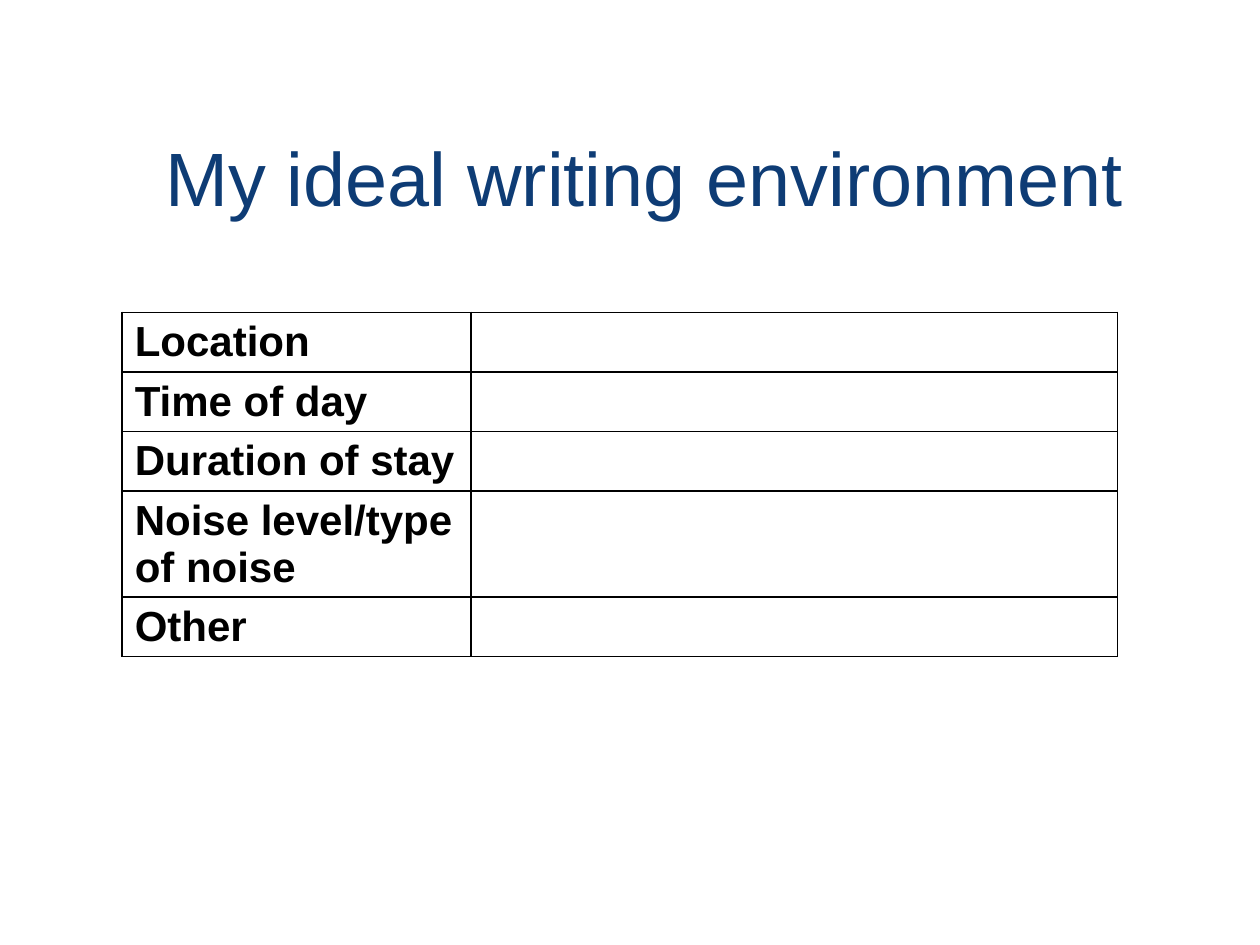
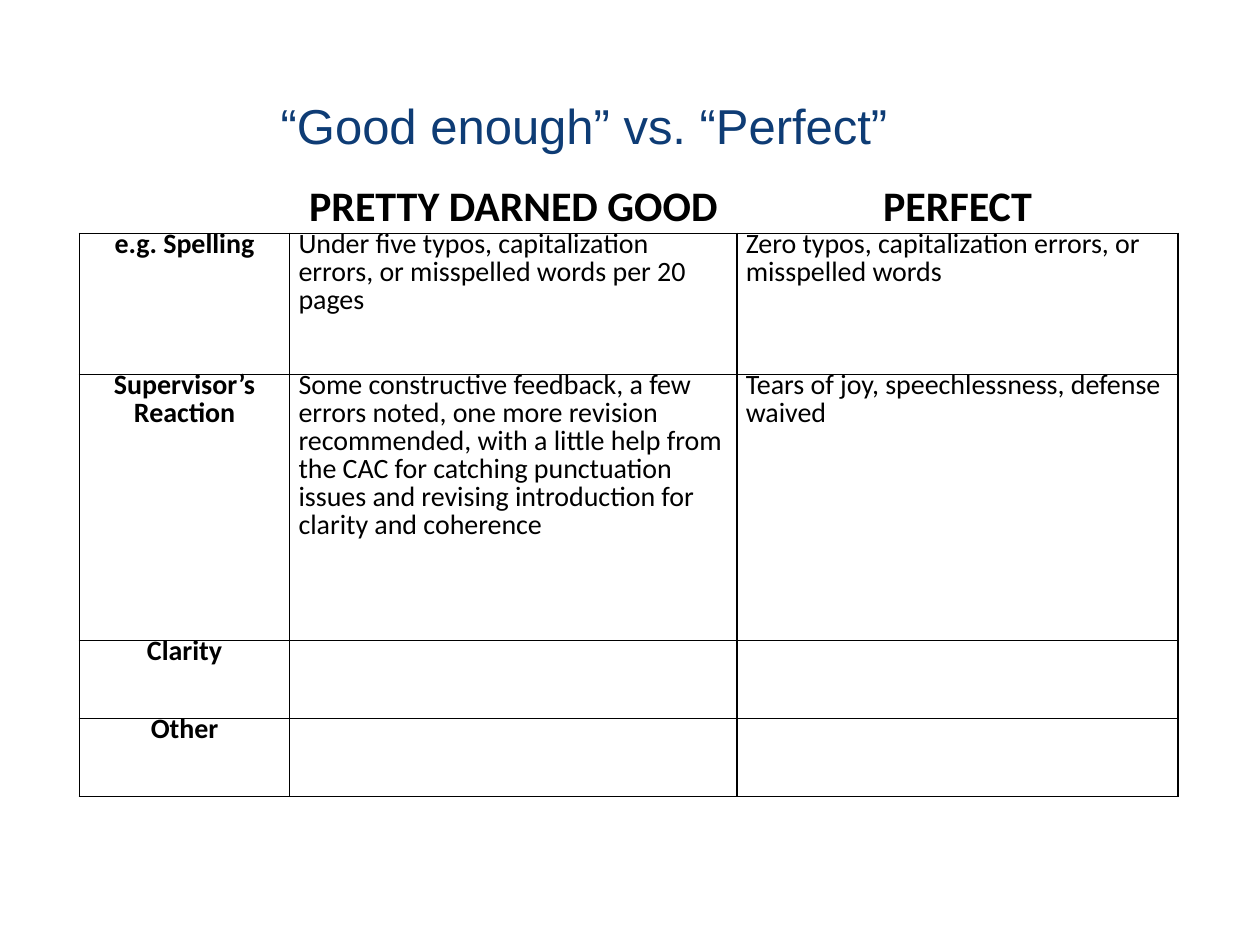
import pptx
import pptx.dml.color
import pptx.enum.text
import pptx.oxml
import pptx.oxml.ns
import pptx.util

Inches = pptx.util.Inches
Pt = pptx.util.Pt
RGBColor = pptx.dml.color.RGBColor
PP_ALIGN = pptx.enum.text.PP_ALIGN
MSO_ANCHOR = pptx.enum.text.MSO_ANCHOR
MSO_AUTO_SIZE = pptx.enum.text.MSO_AUTO_SIZE

TITLE_BLUE = RGBColor(0x0E, 0x3C, 0x75)
BLACK = RGBColor(0, 0, 0)
WHITE = RGBColor(0xFF, 0xFF, 0xFF)
TITLE_FONT = "Arial"
ALL_SIDES = "LRTB"

ENVIRONMENT_LABELS = ["Location", "Time of day", "Duration of stay", "Noise level/type of noise", "Other"]
COMPARISON_ROWS = [
    ["", "PRETTY DARNED GOOD", "PERFECT"],
    ["e.g. Spelling",
     "Under five typos, capitalization errors, or misspelled words per 20 pages",
     "Zero typos, capitalization errors, or misspelled words"],
    ["Supervisor’s Reaction",
     "Some constructive feedback, a few errors noted, one more revision recommended, "
     "with a little help from the CAC for catching punctuation issues and revising "
     "introduction for clarity and coherence",
     "Tears of joy, speechlessness, defense waived"],
    ["Clarity", "", ""],
    ["Other", "", ""],
]


def write_text(text_frame, text, font=TITLE_FONT, size=24, color=BLACK, bold=False,
               align=PP_ALIGN.LEFT, line_spacing=None):
    text_frame.word_wrap = True
    paragraph = text_frame.paragraphs[0]
    paragraph.alignment = align
    if line_spacing:
        paragraph.line_spacing = Pt(line_spacing)
    run = paragraph.add_run()
    run.text = text
    run.font.name = font
    run.font.size = Pt(size)
    run.font.bold = bold
    run.font.color.rgb = color


def add_titled_slide(presentation, title, box, size, align):
    slide = presentation.slides.add_slide(presentation.slide_layouts[5])
    slide.background.fill.solid()
    slide.background.fill.fore_color.rgb = WHITE
    shape = slide.shapes.title
    shape.left, shape.top, shape.width, shape.height = map(Inches, box)
    shape.text_frame.auto_size = MSO_AUTO_SIZE.NONE
    shape.text_frame.vertical_anchor = MSO_ANCHOR.MIDDLE
    write_text(shape.text_frame, title, size=size, color=TITLE_BLUE, align=align)
    return slide


def set_borders(cell, sides):
    properties = cell._tc.get_or_add_tcPr()
    for side in ALL_SIDES:
        paint = f'<a:solidFill><a:srgbClr val="{BLACK}"/></a:solidFill>' if side in sides else "<a:noFill/>"
        properties.append(pptx.oxml.parse_xml(
            f'<a:ln{side} {pptx.oxml.ns.nsdecls("a")} w="{Pt(1)}">{paint}</a:ln{side}>'))
    cell.fill.background()


def add_plain_table(slide, left, top, widths, heights):
    frame = slide.shapes.add_table(
        len(heights), len(widths), Inches(left), Inches(top), Inches(sum(widths)), Inches(sum(heights)))
    table = frame.table
    table.first_row = False
    table.horz_banding = False
    for column, width in zip(table.columns, widths):
        column.width = Inches(width)
    for row, height in zip(table.rows, heights):
        row.height = Inches(height)
    return table


def add_environment_table(slide, left, top):
    table = add_plain_table(slide, left, top, [2.77, 5.13], [0.47, 0.47, 0.47, 0.84, 0.47])
    for row, label in zip(table.rows, ENVIRONMENT_LABELS):
        for cell in row.cells:
            set_borders(cell, ALL_SIDES)
        write_text(row.cells[0].text_frame, label, bold=True)


def add_comparison_table(slide, left, top):
    table = add_plain_table(slide, left, top, [1.67, 3.55, 3.5], [0.55, 1.12, 2.11, 0.62, 0.62])
    for row_index, texts in enumerate(COMPARISON_ROWS):
        is_header = row_index == 0
        for column_index, text in enumerate(texts):
            is_label = is_header or column_index == 0
            cell = table.cell(row_index, column_index)
            set_borders(cell, "B" if is_header else ALL_SIDES)
            if not text:
                continue
            cell.margin_left = cell.margin_right = Inches(0.07)
            cell.margin_top = Inches(0.33 if is_header else 0)
            cell.margin_bottom = 0
            write_text(cell.text_frame, text, font="Calibri", size=24 if is_header else 16,
                       bold=is_label, align=PP_ALIGN.CENTER if is_label else PP_ALIGN.LEFT,
                       line_spacing=16)


def main():
    presentation = pptx.Presentation()
    presentation.slide_width = Inches(10)
    presentation.slide_height = Inches(7.5)
    environment_slide = add_titled_slide(
        presentation, "My ideal writing environment", (1.21, 0.77, 7.99, 1.25), 43.2, PP_ALIGN.LEFT)
    add_environment_table(environment_slide, 0.97, 2.48)
    comparison_slide = add_titled_slide(
        presentation, "“Good enough” vs. “Perfect”", (1.21, 0.37, 6.85, 1.25), 28, PP_ALIGN.CENTER)
    add_comparison_table(comparison_slide, 0.63, 1.3)
    presentation.save("out.pptx")


if __name__ == "__main__":
    main()
